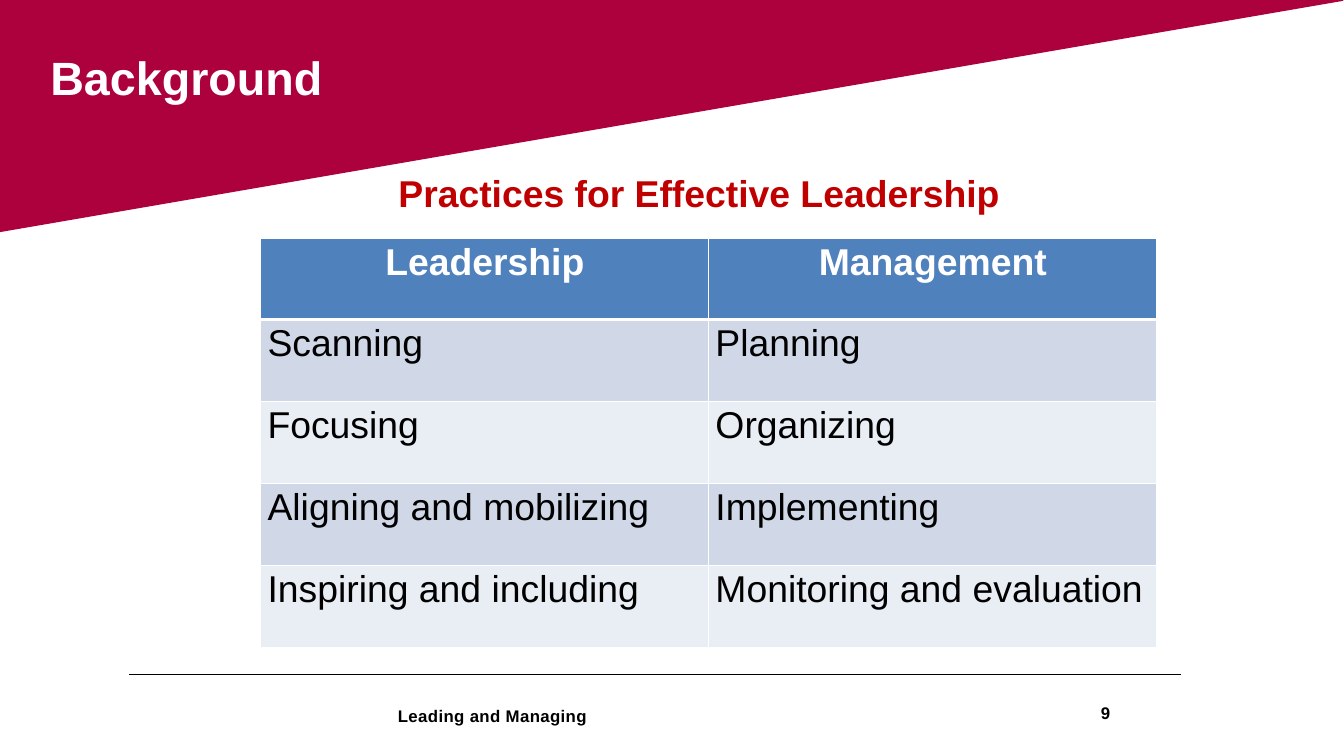
from lxml.etree import SubElement
from pptx import Presentation
from pptx.dml.color import RGBColor
from pptx.enum.shapes import MSO_CONNECTOR
from pptx.enum.text import MSO_ANCHOR, PP_ALIGN
from pptx.oxml.ns import qn
from pptx.util import Cm, Pt

# Content
TITLE = "Background"
SUBTITLE = "Practices for Effective Leadership"
FOOTER = "Leading and Managing"
PAGE_NUMBER = "9"
PRACTICES = [
    ("Leadership", "Management"),
    ("Scanning", "Planning"),
    ("Focusing", "Organizing"),
    ("Aligning and mobilizing", "Implementing"),
    ("Inspiring and including", "Monitoring and evaluation"),
]

COLORS = {
    "banner": "AD013E",
    "subtitle": "C00000",
    "header": "4F81BD",
    "odd_row": "D0D8E8",
    "even_row": "E9EDF4",
    "white": "FFFFFF",
    "black": "000000",
}
FONT = "Arial"
HEADER_HEIGHT, ROW_HEIGHT, COLUMN_WIDTH = Cm(3.05), Cm(3.1), Cm(16.93)


def color(name):
    return RGBColor.from_string(COLORS[name])


def write(text_frame, text, size, color_name, bold=True, align=PP_ALIGN.LEFT):
    text_frame.text = text
    paragraph = text_frame.paragraphs[0]
    paragraph.alignment = align
    font = paragraph.runs[0].font
    font.name, font.size, font.bold = FONT, Pt(size), bold
    font.color.rgb = color(color_name)
    return paragraph


def remove_margins(text_frame):
    text_frame.margin_left = text_frame.margin_right = 0
    text_frame.margin_top = text_frame.margin_bottom = 0


def add_text_box(slide, left, top, width, height):
    text_frame = slide.shapes.add_textbox(
        Cm(left), Cm(top), Cm(width), Cm(height)).text_frame
    text_frame.word_wrap = True
    return text_frame


def set_borders(cell, widths):
    properties = cell._tc.get_or_add_tcPr()
    for side, width in widths.items():
        line = SubElement(properties, qn(f"a:ln{side}"), w=str(Pt(width)))
        fill = SubElement(line, qn("a:solidFill"))
        SubElement(fill, qn("a:srgbClr"), val=COLORS["white"])


def add_banner(slide):
    builder = slide.shapes.build_freeform(Cm(0), Cm(0))
    builder.add_line_segments([(Cm(0), Cm(8.74)), (Cm(50.75), Cm(0))])
    banner = builder.convert_to_shape()
    banner.shadow.inherit = False
    banner.fill.solid()
    banner.fill.fore_color.rgb = color("banner")
    banner.line.color.rgb = color("banner")
    banner.line.width = Pt(2)


def add_title(slide):
    title = slide.shapes.title
    title.left, title.top = Cm(1.9), Cm(1.68)
    title.width, title.height = Cm(11.38), Cm(2.13)
    text_frame = title.text_frame
    remove_margins(text_frame)
    text_frame.vertical_anchor = MSO_ANCHOR.TOP
    write(text_frame, TITLE, 50, "white").line_spacing = Pt(65)
    # Bring the title in front of the banner
    slide.shapes._spTree.append(title._element)


def add_footer(slide):
    rule = slide.shapes.add_connector(
        MSO_CONNECTOR.STRAIGHT, Cm(4.88), Cm(25.5), Cm(44.65), Cm(25.5))
    rule.line.color.rgb = color("black")
    rule.line.width = Pt(0.75)
    SubElement(rule._element.spPr, qn("a:effectLst"))

    footer = add_text_box(slide, 15.04, 26.54, 27.18, 0.84)
    remove_margins(footer)
    paragraph = write(footer, FOOTER, 18, "black")
    paragraph.line_spacing = Pt(25.2)
    paragraph.runs[0].font._element.set("spc", "40")

    number = add_text_box(slide, 40.08, 26.54, 2.13, 0.84)
    number.vertical_anchor = MSO_ANCHOR.MIDDLE
    write(number, PAGE_NUMBER, 18, "black", align=PP_ALIGN.RIGHT)


def add_practices(slide):
    rows, columns = len(PRACTICES), len(PRACTICES[0])
    table = slide.shapes.add_table(
        rows, columns, Cm(9.86), Cm(9.02), COLUMN_WIDTH * columns,
        HEADER_HEIGHT + ROW_HEIGHT * (rows - 1)).table
    for column in table.columns:
        column.width = COLUMN_WIDTH
    for row_index, practices in enumerate(PRACTICES):
        is_header = row_index == 0
        table.rows[row_index].height = HEADER_HEIGHT if is_header else ROW_HEIGHT
        band = "odd_row" if row_index % 2 else "even_row"
        for column_index, practice in enumerate(practices):
            cell = table.cell(row_index, column_index)
            set_borders(cell, {"L": 1, "R": 1,
                               "T": 3 if row_index == 1 else 1,
                               "B": 3 if is_header else 1})
            cell.fill.solid()
            cell.fill.fore_color.rgb = color("header" if is_header else band)
            write(cell.text_frame, practice, 40,
                  "white" if is_header else "black", bold=is_header,
                  align=PP_ALIGN.CENTER if is_header else PP_ALIGN.LEFT)


def main():
    presentation = Presentation()
    presentation.slide_width, presentation.slide_height = Cm(50.8), Cm(28.58)
    title_only = presentation.slide_layouts[5]
    slide = presentation.slides.add_slide(title_only)

    add_banner(slide)
    add_title(slide)
    add_footer(slide)
    subtitle = add_text_box(slide, 14.81, 6.3, 23.93, 2.74)
    write(subtitle, SUBTITLE, 40, "subtitle")
    add_practices(slide)
    presentation.save("out.pptx")


if __name__ == "__main__":
    main()
